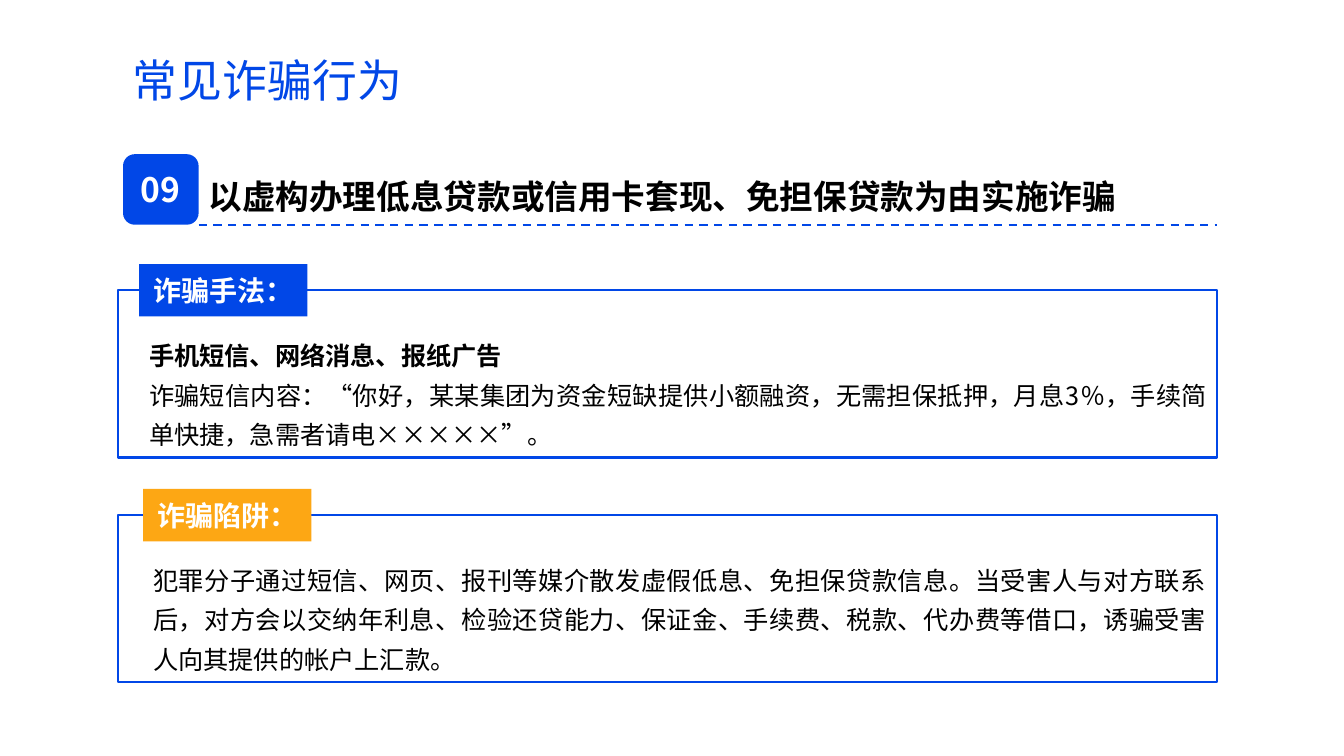
from lxml import etree
from pptx import Presentation
from pptx import util as u
from pptx.dml.color import RGBColor
from pptx.enum import dml, shapes, text
from pptx.oxml.ns import qn

THEME = {
    "font": "Noto Sans CJK SC",
    "blue": "0147E7", "orange": "FDA714", "white": "FFFFFF", "black": "000000",
    "title": 32, "heading": 24, "label": 20, "body": 18, "line": 1.5,
}
TITLE = "常见诈骗行为"
NUMBER = "09"
HEADING = "以虚构办理低息贷款或信用卡套现、免担保贷款为由实施诈骗"
PANELS = [
    {"label": "诈骗手法：", "color": "blue", "inset": 0.21, "body": [
        ("手机短信、网络消息、报纸广告", True),
        ("诈骗短信内容：“你好，某某集团为资金短缺提供小额融资，无需担保抵押，月息3％，"
         "手续简单快捷，急需者请电×××××”。", False),
    ]},
    {"label": "诈骗陷阱：", "color": "orange", "inset": 0.25, "body": [
        ("犯罪分子通过短信、网页、报刊等媒介散发虚假低息、免担保贷款信息。当受害人与对方联系后，"
         "对方会以交纳年利息、检验还贷能力、保证金、手续费、税款、代办费等借口，"
         "诱骗受害人向其提供的帐户上汇款。", False),
    ]},
]

LEFT, WIDTH, HEIGHT = 1.17, 10.9, 1.66
FIRST_TOP, PITCH = 2.88, 2.23
LABEL_W, LABEL_H = 1.67, 0.52

prs = Presentation()
prs.slide_width, prs.slide_height = u.Inches(13.33), u.Inches(7.5)
s = prs.slides.add_slide(prs.slide_layouts[6])


def color(name):
    return RGBColor.from_string(THEME[name])


def write(sp, paragraphs, size, ink="black", align=text.PP_ALIGN.LEFT,
          anchor=text.MSO_ANCHOR.TOP, spacing=1.0):
    tf = sp.text_frame
    tf.word_wrap = True
    tf.vertical_anchor = anchor
    for i, (words, bold) in enumerate(paragraphs):
        p = tf.add_paragraph() if i else tf.paragraphs[0]
        p.alignment, p.line_spacing = align, spacing
        r = p.add_run()
        r.text = words
        r.font.size, r.font.bold = u.Pt(THEME[size]), bold
        r.font.color.rgb = color(ink)
        r.font.name = THEME["font"]
        ea = etree.SubElement(r.font._element, qn("a:ea"))
        ea.set("typeface", THEME["font"])


def text_box(box, paragraphs, **fmt):
    sp = s.shapes.add_textbox(*map(u.Inches, box))
    write(sp, paragraphs, **fmt)


def block(box, fill=None, line=None, kind=shapes.MSO_SHAPE.RECTANGLE):
    sp = s.shapes.add_shape(kind, *map(u.Inches, box))
    sp.shadow.inherit = False
    if fill:
        sp.fill.solid()
        sp.fill.fore_color.rgb = color(fill)
    else:
        sp.fill.background()
    if line:
        sp.line.color.rgb = color(line)
        sp.line.width = u.Pt(THEME["line"])
    else:
        sp.line.fill.background()
    return sp


def badge(box, words, size, fill, kind=shapes.MSO_SHAPE.RECTANGLE):
    sp = block(box, fill=fill, kind=kind)
    write(sp, [(words, True)], size, ink="white",
          align=text.PP_ALIGN.CENTER, anchor=text.MSO_ANCHOR.MIDDLE)


def dashed_rule(x1, x2, y):
    ln = s.shapes.add_connector(shapes.MSO_CONNECTOR.STRAIGHT,
                                *map(u.Inches, (x1, y, x2, y)))
    ln.line.color.rgb = color("blue")
    ln.line.width = u.Pt(THEME["line"])
    ln.line.dash_style = dml.MSO_LINE.DASH
    etree.SubElement(ln._element.spPr, qn("a:effectLst"))


def panel(top, label, fill, inset, body):
    x = LEFT + inset
    block((LEFT, top, WIDTH, HEIGHT), line="blue")
    text_box((x, top + 0.36, LEFT + WIDTH - x, 1.25), body, size="body",
             align=text.PP_ALIGN.JUSTIFY, spacing=1.3)
    badge((x, top - LABEL_H / 2, LABEL_W, LABEL_H), label, "label", fill)


text_box((1.22, 0.51, 11.5, 0.63), [(TITLE, False)], size="title", ink="blue",
         anchor=text.MSO_ANCHOR.MIDDLE, spacing=0.9)
text_box((1.97, 1.58, 10.19, 0.58), [(HEADING, True)], size="heading", spacing=1.3)
badge((1.22, 1.53, 0.75, 0.7), NUMBER, "heading", "blue",
      kind=shapes.MSO_SHAPE.ROUNDED_RECTANGLE)
dashed_rule(1.97, LEFT + WIDTH, 2.23)
for i, item in enumerate(PANELS):
    panel(FIRST_TOP + i * PITCH, item["label"], item["color"], item["inset"], item["body"])

prs.save("out.pptx")
